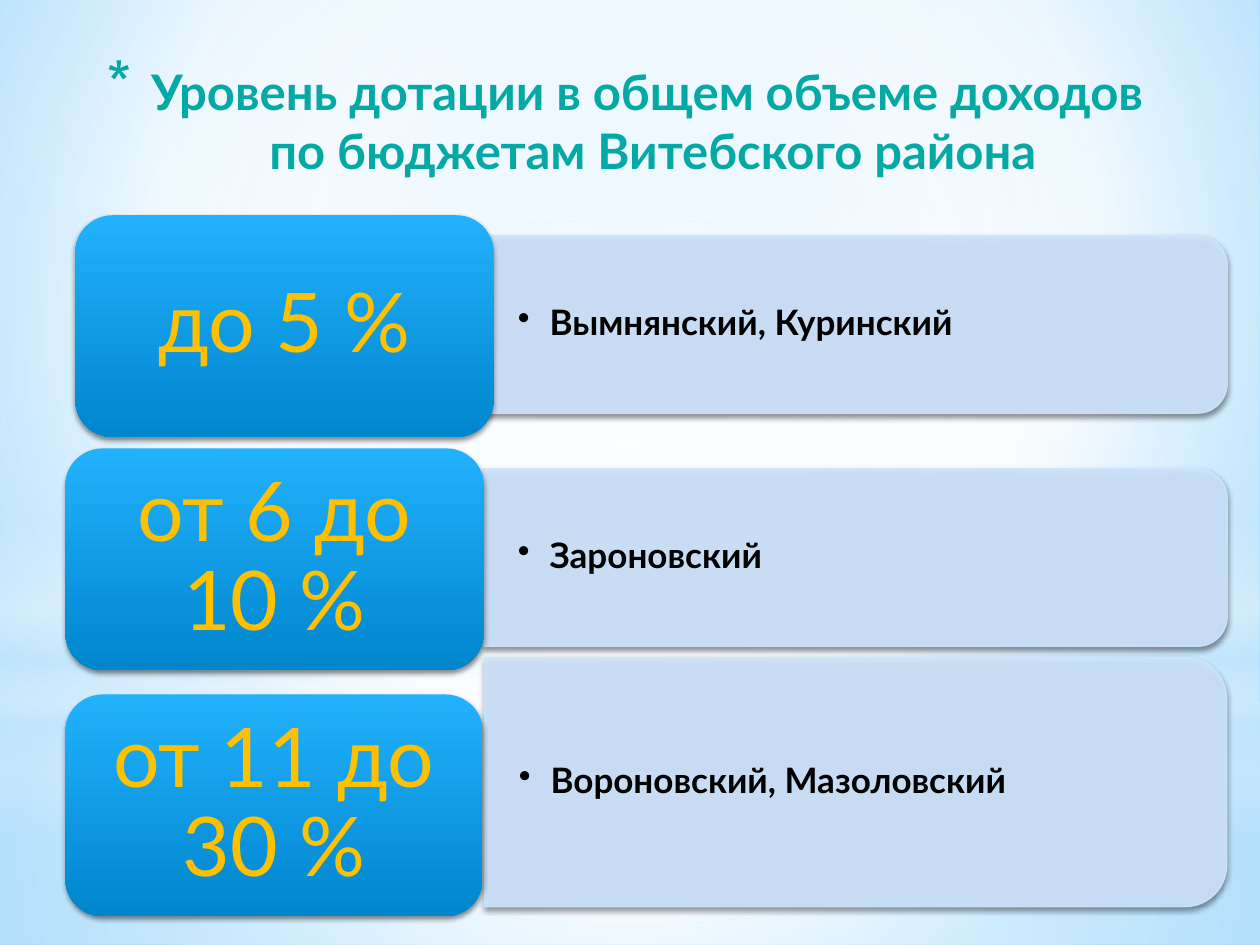
import pptx
import pptx.util
import pptx.dml.color
import pptx.enum.shapes
import pptx.enum.text
import pptx.oxml
from dataclasses import dataclass
from pptx.oxml.ns import qn

Cm = pptx.util.Cm
SHAPES = pptx.enum.shapes.MSO_SHAPE
ALIGN = pptx.enum.text.PP_ALIGN
ANCHOR = pptx.enum.text.MSO_ANCHOR
NAMESPACE = 'xmlns:a="http://schemas.openxmlformats.org/drawingml/2006/main"'


@dataclass(frozen=True)
class Theme:
    font: str = "Lato"
    teal: str = "04A8A4"
    panel: str = "CEE5FE"
    black: str = "000000"
    gold: str = "FFC000"
    pill_stops: tuple = ((0, "22B1FD", 100), (100, "0086CD", 100))
    title_size: int = 28
    body_size: int = 20
    pill_size: int = 47


THEME = Theme()
CENTRE = (50, 50, 50, 50)
WIDTH, HEIGHT = 25.4, 19.05

BACKDROP = (
    (SHAPES.RECTANGLE, (0, 14.17, WIDTH, 4.88),
     ((0, "FFFFFF", 91), (37, "FFFFFF", 76), (100, "C6E7FC", 79)), CENTRE),
    (SHAPES.RECTANGLE, (0, 0, WIDTH, 14.17),
     ((0, "FFFFFF", 89), (48, "FFFFFF", 62), (100, "C6E7FC", 79)), CENTRE),
    (SHAPES.RECTANGLE, (0, 10.46, WIDTH, 6.35),
     ((0, "FFFFFF", 0), (29, "FFFFFF", 30), (45, "C6E7FC", 40),
      (55, "FFFFFF", 26), (65, "C6E7FC", 60), (100, "FFFFFF", 0)), None),
    (SHAPES.OVAL, (0, 4.45, WIDTH, 14.17),
     ((0, "FFFFFF", 100), (56, "FFFFFF", 0)), CENTRE),
)

# Label, districts, pill box, panel box
ROWS = (
    ("до 5 %", "Вымнянский, Куринский",
     (1.52, 4.34, 8.43, 4.47), (9.75, 4.75, 14.99, 3.58)),
    ("от 6 до 10 %", "Зароновский",
     (1.32, 9.04, 8.43, 4.47), (9.75, 9.45, 14.99, 3.58)),
    ("от 11 до 30 %", "Вороновский, Мазоловский",
     (1.32, 14, 8.41, 4.47), (9.77, 13.25, 14.96, 5.03)),
)


def element(body):
    """Parse one DrawingML element whose tag carries {ns}."""
    return pptx.oxml.parse_xml(body.replace("{ns}", NAMESPACE))


def set_gradient(fill, owner, stops, focus=None):
    """Fill with stops, circular around focus or else running downwards."""
    fill.gradient()
    stop_xml = "".join(
        f'<a:gs pos="{position * 1000}"><a:srgbClr val="{color}">'
        f'<a:alpha val="{alpha * 1000}"/></a:srgbClr></a:gs>'
        for position, color, alpha in stops)
    if focus:
        left, top, right, bottom = (side * 1000 for side in focus)
        course = (f'<a:path path="circle"><a:fillToRect l="{left}" t="{top}" '
                  f'r="{right}" b="{bottom}"/></a:path>')
    else:
        course = '<a:lin ang="5400000" scaled="0"/>'
    old = next(owner.iter(qn("a:gradFill")))
    old.getparent().replace(old, element(
        f'<a:gradFill {{ns}} rotWithShape="1"><a:gsLst>{stop_xml}</a:gsLst>'
        f'{course}</a:gradFill>'))


def add_shape(slide, kind, box):
    shape = slide.shapes.add_shape(kind, *map(Cm, box))
    shape.shadow.inherit = False
    shape.line.fill.background()
    return shape


def add_shadow(shape):
    effects = shape.element.spPr.find(qn("a:effectLst"))
    effects.append(element(
        '<a:outerShdw {ns} blurRad="39370" dist="22860" dir="5400000" '
        f'rotWithShape="0"><a:srgbClr val="{THEME.black}">'
        '<a:alpha val="45000"/></a:srgbClr></a:outerShdw>'))


def write_text(shape, text, frame_format, paragraph_format, size, color, bold=False):
    frame = shape.text_frame
    frame.text = text
    paragraph = frame.paragraphs[0]
    for target, values in ((frame, {"word_wrap": True, **frame_format}),
                           (paragraph, paragraph_format)):
        for name, value in values.items():
            setattr(target, name, value)
    font_format = {"name": THEME.font, "size": pptx.util.Pt(size), "bold": bold}
    for run in paragraph.runs:
        for name, value in font_format.items():
            setattr(run.font, name, value)
        run.font.color.rgb = pptx.dml.color.RGBColor.from_string(color)
    return paragraph


def add_bullet(paragraph, character, indent, *decorations):
    properties = paragraph._p.get_or_add_pPr()
    properties.set("marL", str(Cm(indent)))
    properties.set("indent", str(-Cm(indent)))
    for body in (*decorations, f'<a:buChar {{ns}} char="{character}"/>'):
        properties.append(element(body))


def margins(horizontal, vertical):
    return {"margin_left": Cm(horizontal), "margin_right": Cm(horizontal),
            "margin_top": Cm(vertical), "margin_bottom": Cm(vertical)}


def draw_backdrop(slide):
    set_gradient(slide.background.fill, slide.element,
                 ((0, "B0E0FF", 100), (60, "FFFFFF", 100), (100, "6BC5FF", 100)),
                 (20, 10, 20, 60))
    for kind, box, stops, focus in BACKDROP:
        shape = add_shape(slide, kind, box)
        set_gradient(shape.fill, shape.element, stops, focus)


def draw_title(slide, box):
    title = slide.shapes.add_textbox(*map(Cm, box))
    paragraph = write_text(
        title, "Уровень дотации в общем объеме доходов \vпо бюджетам Витебского района",
        {}, {"alignment": ALIGN.CENTER}, THEME.title_size, THEME.teal, True)
    add_bullet(paragraph, "*", 0.89,
               f'<a:buClr {{ns}}><a:srgbClr val="{THEME.teal}"/></a:buClr>',
               '<a:buSzPct {ns} val="128000"/>')


def draw_panel(slide, box, text):
    """Panel rounded on its right: a top-rounded shape turned a quarter."""
    left, top, width, height = box
    turned = (left + (width - height) / 2, top + (height - width) / 2, height, width)
    panel = add_shape(slide, SHAPES.ROUND_2_SAME_RECTANGLE, turned)
    panel.rotation = 90
    color = pptx.dml.color.RGBColor.from_string(THEME.panel)
    panel.line.width = pptx.util.Pt(0.75)
    for fill in (panel.fill, panel.line.fill):
        fill.solid()
        fill.fore_color.rgb = color
    for node in panel.element.spPr.iter(qn("a:srgbClr")):
        node.append(element('<a:alpha {ns} val="90000"/>'))
    add_shadow(panel)

    inset = 0.18
    label = slide.shapes.add_textbox(
        *map(Cm, (left, top + inset, width - inset, height - 2 * inset)))
    paragraph = write_text(
        label, text, {"vertical_anchor": ANCHOR.MIDDLE, **margins(0.69, 0.36)},
        {"level": 1, "line_spacing": 0.9, "alignment": ALIGN.LEFT},
        THEME.body_size, THEME.black, True)
    add_bullet(paragraph, "•", 0.64)


def draw_pill(slide, box, text):
    pill = add_shape(slide, SHAPES.ROUNDED_RECTANGLE, box)
    set_gradient(pill.fill, pill.element, THEME.pill_stops)
    add_shadow(pill)
    write_text(pill, text, {"vertical_anchor": ANCHOR.MIDDLE, **margins(0.73, 0.48)},
               {"line_spacing": 0.9, "alignment": ALIGN.CENTER},
               THEME.pill_size, THEME.gold)


def main():
    presentation = pptx.Presentation()
    presentation.slide_width, presentation.slide_height = Cm(WIDTH), Cm(HEIGHT)
    slide = presentation.slides.add_slide(presentation.slide_layouts[6])
    draw_backdrop(slide)
    draw_title(slide, (0.51, 1.12, 24.41, 2.39))
    for label, districts, pill_box, panel_box in ROWS:
        draw_panel(slide, panel_box, districts)
        draw_pill(slide, pill_box, label)
    presentation.save("out.pptx")


if __name__ == "__main__":
    main()
